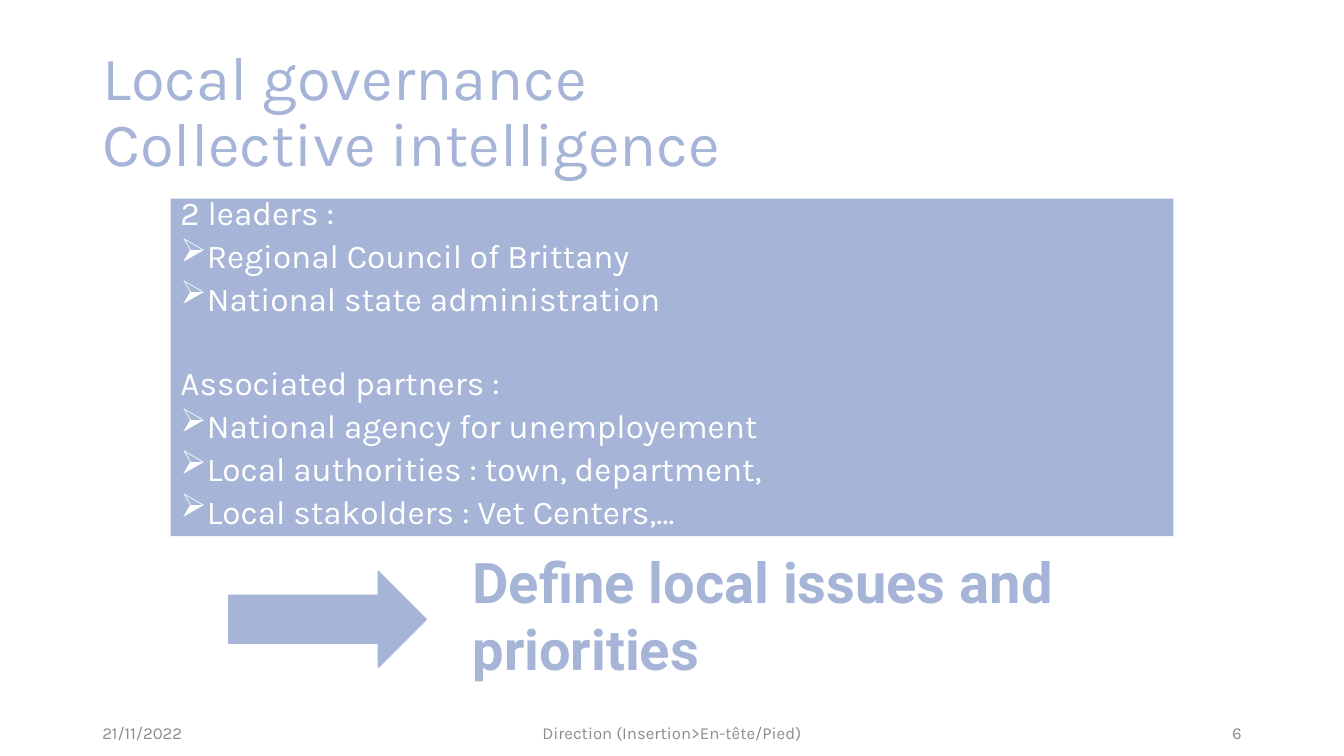
from dataclasses import dataclass

from lxml import etree
from pptx import Presentation
from pptx.dml.color import RGBColor
from pptx.enum.shapes import MSO_SHAPE
from pptx.enum.text import MSO_ANCHOR, MSO_AUTO_SIZE, PP_ALIGN
from pptx.oxml.ns import qn
from pptx.util import Pt

LEFT, CENTER, RIGHT = PP_ALIGN.LEFT, PP_ALIGN.CENTER, PP_ALIGN.RIGHT
TOP, MIDDLE = MSO_ANCHOR.TOP, MSO_ANCHOR.MIDDLE
RECT, ARROW = MSO_SHAPE.RECTANGLE, MSO_SHAPE.RIGHT_ARROW
COLORS = {"blue": "A5B4D7", "white": "FFFFFF", "gray": "8C8C8C"}
TITLE_ONLY = 5
BULLET_INDENT = Pt(18)
ITEM_GAP, GROUP_GAP = 10.5, 40.5


@dataclass(frozen=True)
class Box:
    left: float
    top: float
    width: float
    height: float

    def lengths(self) -> tuple:
        return Pt(self.left), Pt(self.top), Pt(self.width), Pt(self.height)


@dataclass(frozen=True)
class Style:
    size: float
    color: str
    font: str = "Karla"
    bold: bool = False


@dataclass(frozen=True)
class Group:
    heading: str
    items: tuple


@dataclass(frozen=True)
class Footer:
    text: str
    left: float
    width: float
    align: PP_ALIGN


TITLE = Style(44, "blue")
BODY = Style(23.8, "white")
FOOTER = Style(12, "gray")
CONCLUSION = Style(40, "blue", "Roboto", True)

GROUPS = (
    Group("2 leaders :", ("Regional Council of Brittany", "National state administration")),
    Group("Associated partners :", (
        "National agency for unemployement",
        "Local authorities : town, department,",
        "Local stakolders : Vet Centers,…",
    )),
)
FOOTERS = (
    Footer("21/11/2022", 66, 216, LEFT),
    Footer("Direction (Insertion>En-tête/Pied)", 318, 324, CENTER),
    Footer("6", 678, 216, RIGHT),
)


def rgb(name: str) -> RGBColor:
    return RGBColor.from_string(COLORS[name])


def add_run(p, text: str, style: Style) -> None:
    r = p.add_run()
    r.text = text
    r.font.name, r.font.size, r.font.bold = style.font, Pt(style.size), style.bold
    r.font.color.rgb = rgb(style.color)


def set_frame(tf, anchor: MSO_ANCHOR) -> None:
    tf.word_wrap = True
    tf.auto_size = MSO_AUTO_SIZE.NONE
    tf.vertical_anchor = anchor


def add_text(s, box: Box, text: str, style: Style, align: PP_ALIGN, anchor: MSO_ANCHOR) -> None:
    tf = s.shapes.add_textbox(*box.lengths()).text_frame
    set_frame(tf, anchor)
    p = tf.paragraphs[0]
    p.alignment = align
    add_run(p, text, style)


def add_solid(s, kind: MSO_SHAPE, box: Box):
    sp = s.shapes.add_shape(kind, *box.lengths())
    sp.shadow.inherit = False
    sp.fill.solid()
    sp.fill.fore_color.rgb = rgb("blue")
    sp.line.fill.background()
    return sp


def add_bullet(p) -> None:
    props = p._p.get_or_add_pPr()
    props.set("marL", str(BULLET_INDENT))
    props.set("indent", str(-BULLET_INDENT))
    etree.SubElement(props, qn("a:buChar")).set("char", "➢")


def add_groups(tf, groups: tuple) -> None:
    set_frame(tf, TOP)
    for g, group in enumerate(groups):
        for i, text in enumerate((group.heading, *group.items)):
            first = g == 0 and i == 0
            p = tf.paragraphs[0] if first else tf.add_paragraph()
            if i:
                add_bullet(p)
            p.alignment = LEFT
            p.line_spacing = 0.7
            if not first:
                p.space_before = Pt(ITEM_GAP if i else GROUP_GAP)
            add_run(p, text, BODY)


def main() -> None:
    prs = Presentation()
    prs.slide_width, prs.slide_height = Pt(960), Pt(540)
    s = prs.slides.add_slide(prs.slide_layouts[TITLE_ONLY])

    # Title
    title = s.shapes.title
    title.left, title.top, title.width, title.height = Box(66, 28.8, 828, 104.4).lengths()
    set_frame(title.text_frame, MIDDLE)
    p = title.text_frame.paragraphs[0]
    p.alignment, p.line_spacing = LEFT, 0.9
    add_run(p, "Local governance", TITLE)
    p.add_line_break()
    add_run(p, "Collective intelligence", TITLE)

    # Leaders and partners
    panel = add_solid(s, RECT, Box(121.8, 141.8, 716.4, 241.2))
    add_groups(panel.text_frame, GROUPS)

    # Footer
    for f in FOOTERS:
        add_text(s, Box(f.left, 516.2, f.width, 14.4), f.text, FOOTER, f.align, MIDDLE)

    # Arrow and conclusion
    arrow = add_solid(s, ARROW, Box(163.4, 408.2, 141.1, 68.4))
    arrow.line.color.rgb = rgb("blue")
    arrow.line.width = Pt(1)
    add_text(s, Box(330.5, 387.4, 456.5, 104.4),
             "Define local issues and priorities", CONCLUSION, LEFT, TOP)

    prs.save("out.pptx")


if __name__ == "__main__":
    main()
